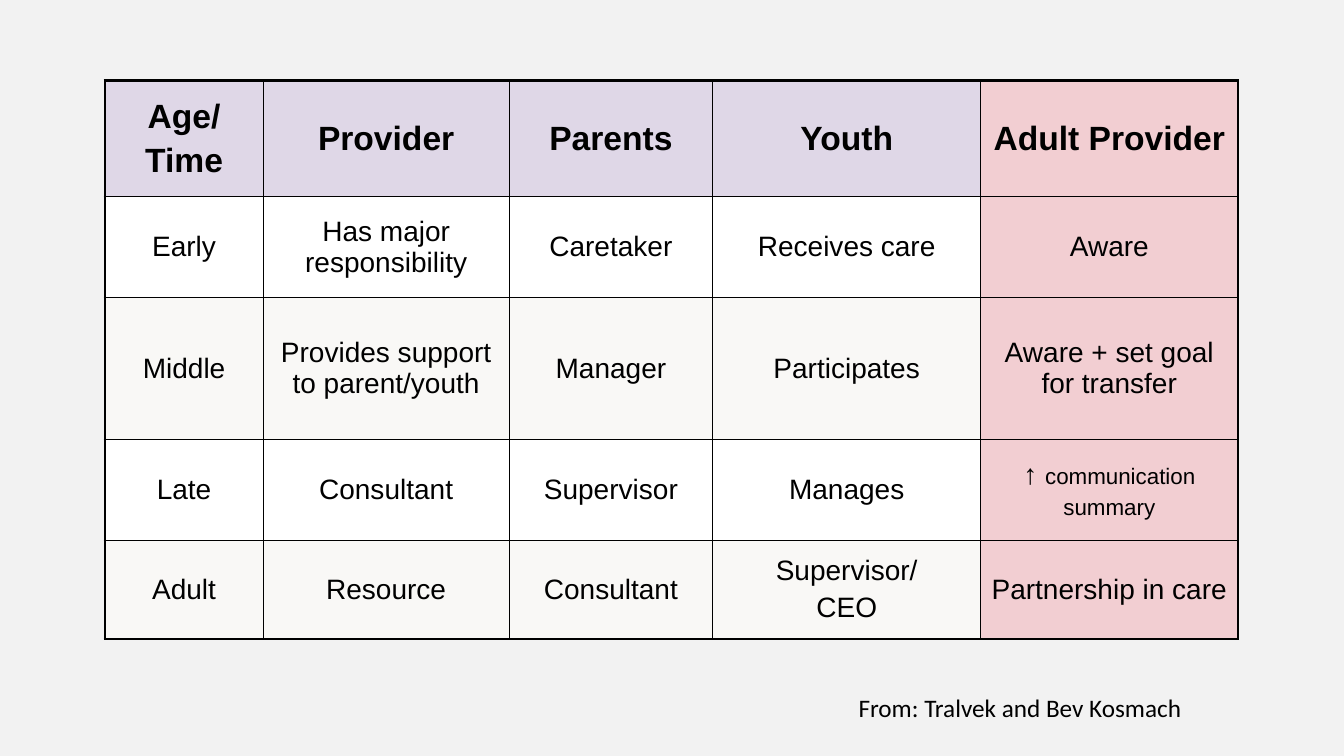
"""Build a slide with a table of shared care roles from early childhood to adulthood."""
from dataclasses import dataclass

import pptx
import pptx.dml.color
import pptx.enum.text
import pptx.oxml
import pptx.oxml.ns
import pptx.table
import pptx.text.text
import pptx.util

Pt = pptx.util.Pt
RGBColor = pptx.dml.color.RGBColor
Align = pptx.enum.text.PP_ALIGN

BLACK = RGBColor(0x00, 0x00, 0x00)
WHITE = RGBColor(0xFF, 0xFF, 0xFF)
PAGE_GREY = RGBColor(0xF2, 0xF2, 0xF2)
BAND_GREY = RGBColor(0xF9, 0xF8, 0xF6)
LILAC = RGBColor(0xDF, 0xD7, 0xE7)
PINK = RGBColor(0xF2, 0xCE, 0xD2)

HEADING_SIZE, BODY_SIZE, SMALL_SIZE = 24, 20, 16
OUTER_LINE, INNER_LINE = 2.25, 1
COLUMN_WIDTHS = (113, 175.7, 145.4, 191.5, 183.7)


@dataclass(frozen=True)
class Stage:
    """One table row: its height, fill and the text of its cells."""
    height: float
    fill: RGBColor
    cells: tuple[str, ...]
    size: int = BODY_SIZE
    bold: bool = False


STAGES = (
    Stage(82.8, LILAC, ("Age/\nTime", "Provider", "Parents", "Youth", "Adult Provider"),
          HEADING_SIZE, True),
    Stage(72, WHITE, ("Early", "Has major responsibility", "Caretaker", "Receives care", "Aware")),
    Stage(101.5, BAND_GREY, ("Middle", "Provides support to parent/youth", "Manager",
                             "Participates", "Aware + set goal for transfer")),
    Stage(72, WHITE, ("Late", "Consultant", "Supervisor", "Manages", "↑ communication\nsummary")),
    Stage(70.5, BAND_GREY, ("Adult", "Resource", "Consultant", "Supervisor/\nCEO",
                            "Partnership in care")),
)


def add_span(para: pptx.text.text._Paragraph, text: str, *, size: float,
             bold: bool = False, font: str = "Arial") -> None:
    """Append formatted text to a paragraph."""
    span = para.add_run()
    span.text = text
    span.font.size = Pt(size)
    span.font.bold = bold
    span.font.name = font
    span.font.color.rgb = BLACK


def write_cell(cell: pptx.table._Cell, text: str, *, size: float, bold: bool) -> None:
    """Write centred lines, with text beside and below an arrow set smaller."""
    arrow = "↑ "
    line_size = SMALL_SIZE if text.startswith(arrow) else size
    for index, line in enumerate(text.split("\n")):
        para = cell.text_frame.add_paragraph() if index else cell.text_frame.paragraphs[0]
        para.alignment = Align.CENTER
        if index:
            para.space_before = Pt(0.2 * line_size)
        if line.startswith(arrow):
            add_span(para, arrow, size=size, bold=bold)
        add_span(para, line.removeprefix(arrow), size=line_size, bold=bold)


def set_borders(cell: pptx.table._Cell, widths: dict[str, float]) -> None:
    """Draw black borders; keys are L, R, T and B."""
    properties = cell._tc.get_or_add_tcPr()
    for side, width in widths.items():
        properties.append(pptx.oxml.parse_xml(
            f'<a:ln{side} {pptx.oxml.ns.nsdecls("a")} w="{Pt(width)}">'
            f'<a:solidFill><a:srgbClr val="{BLACK}"/></a:solidFill></a:ln{side}>'))


def add_roles_table(page: pptx.slide.Slide) -> None:
    """Add the table of roles by age."""
    last_row, last_column = len(STAGES) - 1, len(COLUMN_WIDTHS) - 1
    table = page.shapes.add_table(
        len(STAGES), len(COLUMN_WIDTHS), Pt(75), Pt(57.6),
        Pt(sum(COLUMN_WIDTHS)), Pt(sum(stage.height for stage in STAGES))).table
    table.horz_banding = False
    for column, width in zip(table.columns, COLUMN_WIDTHS):
        column.width = Pt(width)
    for row, stage in enumerate(STAGES):
        table.rows[row].height = Pt(stage.height)
        for column, text in enumerate(stage.cells):
            cell = table.cell(row, column)
            cell.vertical_anchor = pptx.enum.text.MSO_ANCHOR.MIDDLE
            edges = {"L": column == 0, "R": column == last_column,
                     "T": row == 0, "B": row == last_row}
            set_borders(cell, {side: OUTER_LINE if outer else INNER_LINE
                               for side, outer in edges.items()})
            cell.fill.solid()
            cell.fill.fore_color.rgb = PINK if column == last_column else stage.fill
            write_cell(cell, text, size=stage.size, bold=stage.bold)


def add_source(page: pptx.slide.Slide) -> None:
    """Add the source line below the table."""
    box = page.shapes.add_textbox(Pt(606.2), Pt(491), Pt(299.5), Pt(29))
    box.text_frame.word_wrap = True
    box.text_frame.auto_size = pptx.enum.text.MSO_AUTO_SIZE.SHAPE_TO_FIT_TEXT
    add_span(box.text_frame.paragraphs[0], "From: Tralvek and Bev Kosmach",
             size=18, font="Calibri")


def main() -> None:
    """Build and save the deck."""
    deck = pptx.Presentation()
    deck.slide_width, deck.slide_height = Pt(960), Pt(540)
    page = deck.slides.add_slide(deck.slide_layouts[6])
    page.background.fill.solid()
    page.background.fill.fore_color.rgb = PAGE_GREY
    add_roles_table(page)
    add_source(page)
    deck.save("out.pptx")


if __name__ == "__main__":
    main()
